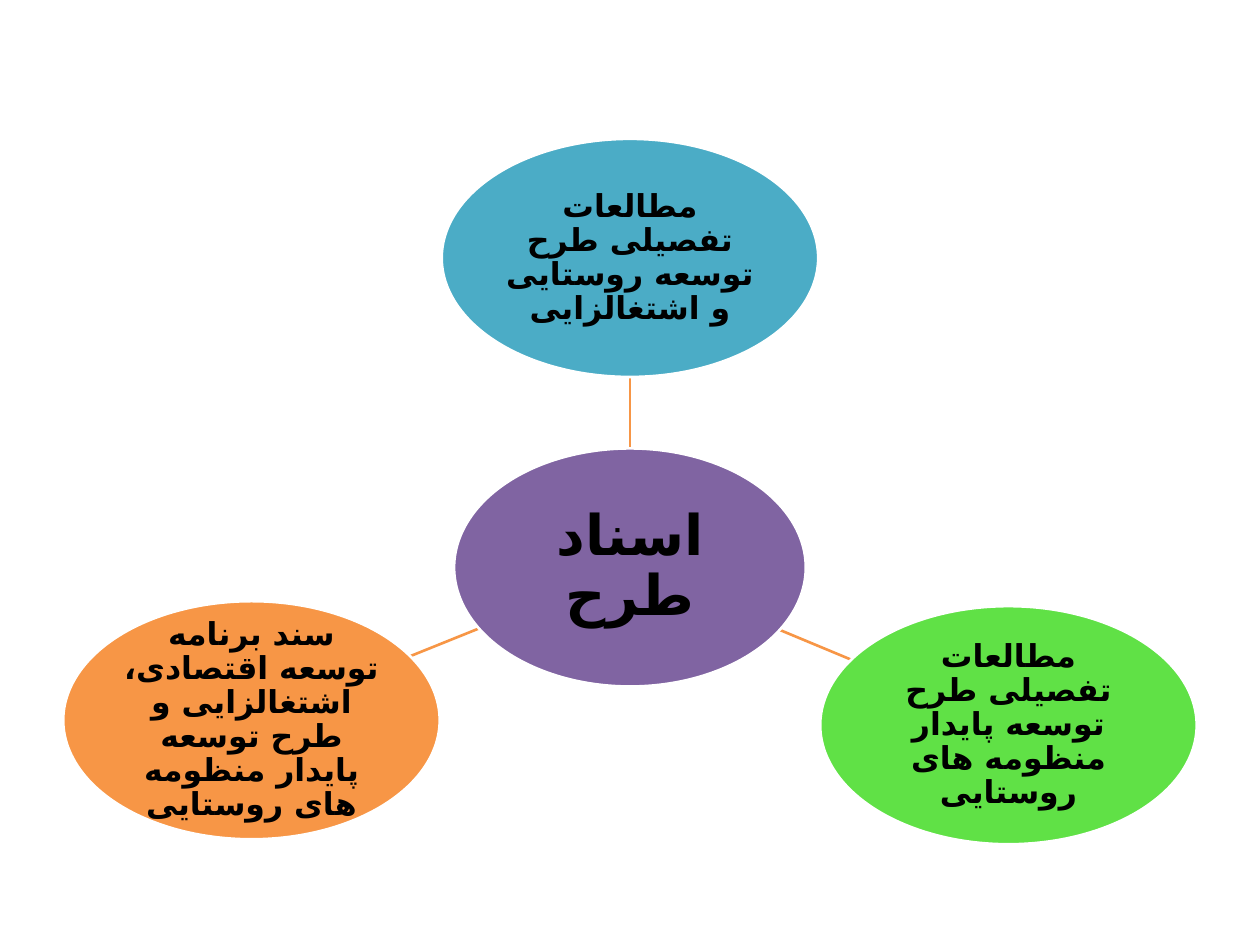
from math import hypot

from lxml import etree
from pptx import Presentation
from pptx import util as u
from pptx.dml.color import RGBColor
from pptx.enum import shapes, text
from pptx.oxml.ns import qn

FONT = "Cambria"
PERSIAN_FONT = "DejaVu Sans"
LINE_COLOUR = "F79646"
HUB = dict(label="اسناد طرح", centre=(12.7, 11.44), size=(7.09, 4.8),
           fill="8064A2", points=32, inset=0.05, rtl=False)
DOCUMENT = dict(size=(7.59, 4.8), points=18, inset=0.03)
DOCUMENTS = [
    dict(DOCUMENT, label="مطالعات تفصیلی طرح توسعه روستایی و اشتغالزایی",
         centre=(12.7, 5.2), fill="4BACC6", rtl=False),
    dict(DOCUMENT, label="مطالعات تفصیلی طرح توسعه پایدار منظومه های روستایی",
         centre=(20.33, 14.62), fill="60E146", rtl=True),
    dict(DOCUMENT, label="سند برنامه توسعه اقتصادی، اشتغالزایی و طرح توسعه "
                         "پایدار منظومه های روستایی",
         centre=(5.07, 14.52), fill="F79646", rtl=True),
]


def paint(colour_format, colour):
    colour_format.rgb = RGBColor.from_string(colour)


def edge_point(node, target):
    (x, y), (width, height) = node["centre"], node["size"]
    dx, dy = target["centre"][0] - x, target["centre"][1] - y
    share = 1 / hypot(dx / (width / 2), dy / (height / 2))
    return u.Cm(x + dx * share), u.Cm(y + dy * share)


def add_node(slide, node):
    (x, y), (width, height) = node["centre"], node["size"]
    oval = slide.shapes.add_shape(
        shapes.MSO_SHAPE.OVAL, u.Cm(x - width / 2), u.Cm(y - height / 2),
        u.Cm(width), u.Cm(height))
    oval.shadow.inherit = False
    oval.fill.solid()
    paint(oval.fill.fore_color, node["fill"])
    paint(oval.line.color, "FFFFFF")
    oval.line.width = u.Pt(1.5)

    frame = oval.text_frame
    frame.word_wrap = True
    frame.vertical_anchor = text.MSO_ANCHOR.MIDDLE
    frame.margin_left = frame.margin_right = u.Cm(node["inset"])
    frame.margin_top = frame.margin_bottom = u.Cm(node["inset"])
    label = frame.paragraphs[0]
    label.text = node["label"]
    label.alignment = text.PP_ALIGN.CENTER
    label.line_spacing = 0.9
    if node["rtl"]:
        label._p.get_or_add_pPr().set("rtl", "1")
    label.font.size = u.Pt(node["points"])
    label.font.bold = True
    paint(label.font.color, "000000")
    label.font.name = FONT
    defaults = label._p.pPr.find(qn("a:defRPr"))
    etree.SubElement(defaults, qn("a:cs")).set("typeface", PERSIAN_FONT)


def add_link(slide, start, end):
    link = slide.shapes.add_connector(
        shapes.MSO_CONNECTOR.STRAIGHT,
        *edge_point(start, end), *edge_point(end, start))
    paint(link.line.color, LINE_COLOUR)
    link.line.width = u.Pt(1.5)
    etree.SubElement(link._element.spPr, qn("a:effectLst"))


def main():
    deck = Presentation()
    deck.slide_width, deck.slide_height = u.Cm(25.4), u.Cm(19.05)
    slide = deck.slides.add_slide(deck.slide_layouts[6])
    for document in DOCUMENTS:
        add_link(slide, HUB, document)
    for node in [HUB] + DOCUMENTS:
        add_node(slide, node)
    deck.save("out.pptx")


if __name__ == "__main__":
    main()
